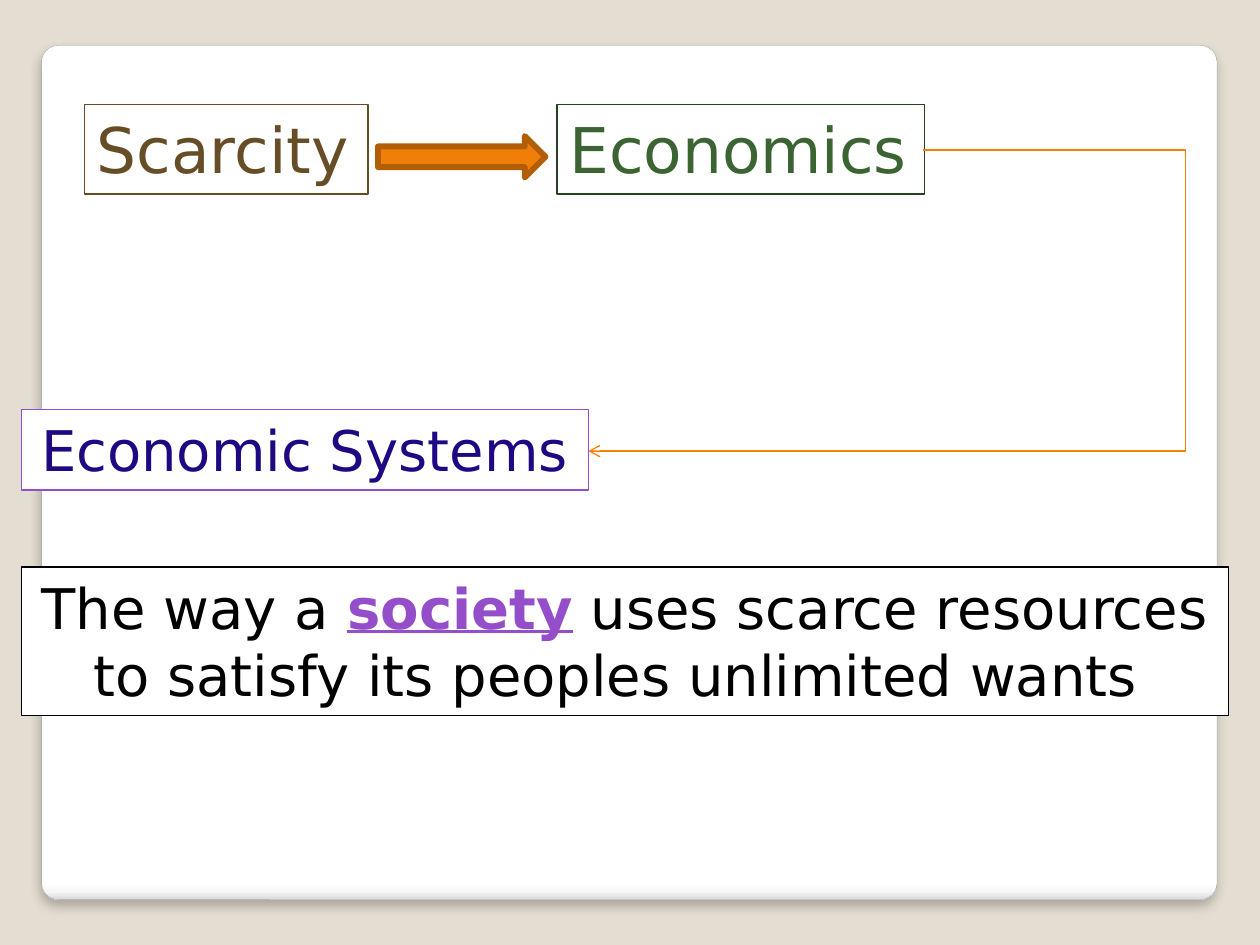
from copy import deepcopy

from lxml.etree import SubElement
from pptx import Presentation
from pptx.dml.color import RGBColor
from pptx.enum.shapes import MSO_CONNECTOR as Connector, MSO_SHAPE as Shape
from pptx.enum.text import MSO_ANCHOR as Anchor, PP_ALIGN as Align
from pptx.oxml.ns import qn
from pptx.util import Inches, Pt

COLORS = {
    "background": "E3DED1", "white": "FFFFFF", "black": "000000",
    "panel line": "A4A4A4", "panel shade": "F7F7F7", "panel edge": "DADADA",
    "brown": "674D26", "green": "3B6432", "green line": "274221",
    "orange": "F07F09", "dark orange": "B25E07", "connector": "F97F00",
    "purple": "954ECA", "navy": "1F0882",
}


def color(name):
    return RGBColor.from_string(COLORS[name])


def add_box(kind, left, top, width, height, fill, line, weight):
    """Add a shadowless shape; a fill of None leaves it see-through."""
    shape = slide.shapes.add_shape(
        kind, Inches(left), Inches(top), Inches(width), Inches(height))
    shape.shadow.inherit = False
    if fill:
        shape.fill.solid()
        shape.fill.fore_color.rgb = color(fill)
    else:
        shape.fill.background()
    shape.line.color.rgb = color(line)
    shape.line.width = Pt(weight)
    return shape


presentation = Presentation()
presentation.slide_width = Inches(10)
presentation.slide_height = Inches(7.5)
slide = presentation.slides.add_slide(presentation.slide_layouts[6])
slide.background.fill.solid()
slide.background.fill.fore_color.rgb = color("background")

# Rounded panel, shaded along its lower edge
panel = add_box(Shape.ROUNDED_RECTANGLE, 0.33, 0.36, 9.33, 6.78,
                "white", "panel line", 0.16)
panel.adjustments[0] = 0.02
panel.fill.gradient()
panel.fill.gradient_angle = 270
stop_list = panel._element.spPr.find(qn("a:gradFill")).find(qn("a:gsLst"))
for _ in range(2):
    stop_list.append(deepcopy(stop_list[-1]))
panel_stops = [(0, "white"), (0.98, "white"),
               (0.99, "panel shade"), (1, "panel edge")]
for stop, (position, name) in zip(panel.fill.gradient_stops, panel_stops):
    stop.position = position
    stop.color.rgb = color(name)

effects = panel._element.spPr.find(qn("a:effectLst"))
shadow = SubElement(effects, qn("a:outerShdw"), blurRad=str(Pt(6)),
                    dist=str(Pt(4)), dir="5400000", algn="t", rotWithShape="0")
shadow_color = SubElement(shadow, qn("a:srgbClr"), val=COLORS["black"])
SubElement(shadow_color, qn("a:alpha"), val="25000")

add_box(Shape.RIGHT_ARROW, 3, 1.08, 1.33, 0.33, "orange", "dark orange", 3.35)

# Left, top, width, height, fill, line, alignment, size, runs
text_boxes = [
    (0.67, 0.83, 2.25, 0.71, None, "brown", Align.LEFT, 36,
     [("Scarcity", "brown", False)]),
    (4.42, 0.83, 2.92, 0.71, None, "green line", Align.LEFT, 36,
     [("Economics", "green", False)]),
    (0.17, 3.25, 4.5, 0.64, "white", "purple", Align.CENTER, 32,
     [("Economic Systems", "navy", False)]),
    (0.17, 4.5, 9.58, 1.18, "white", "black", Align.CENTER, 32,
     [("The way a ", "black", False), ("society", "purple", True),
      (" uses scarce resources to satisfy its peoples unlimited wants ",
       "black", False)]),
]
for left, top, width, height, fill, line, alignment, size, runs in text_boxes:
    box = add_box(Shape.RECTANGLE, left, top, width, height, fill, line, 0.75)
    frame = box.text_frame
    frame.word_wrap = True
    frame.vertical_anchor = Anchor.TOP
    paragraph = frame.paragraphs[0]
    paragraph.alignment = alignment
    for text, name, emphasized in runs:
        run = paragraph.add_run()
        run.text = text
        run.font.name = "DejaVu Sans"
        run.font.size = Pt(size)
        run.font.bold = emphasized
        run.font.underline = emphasized
        run.font.color.rgb = color(name)

# Elbow from Economics, out to the right, back to Economic Systems
elbow = slide.shapes.add_connector(
    Connector.ELBOW, Inches(7.33), Inches(1.19), Inches(4.67), Inches(3.58))
elbow.line.color.rgb = color("connector")
elbow.line.width = Pt(0.75)
properties = elbow._element.spPr
guides = properties.find(qn("a:prstGeom")).get_or_add_avLst()
SubElement(guides, qn("a:gd"), name="adj1", fmla="val -78200")
SubElement(properties.find(qn("a:ln")), qn("a:tailEnd"), type="arrow")
SubElement(properties, qn("a:effectLst"))

presentation.save("out.pptx")
